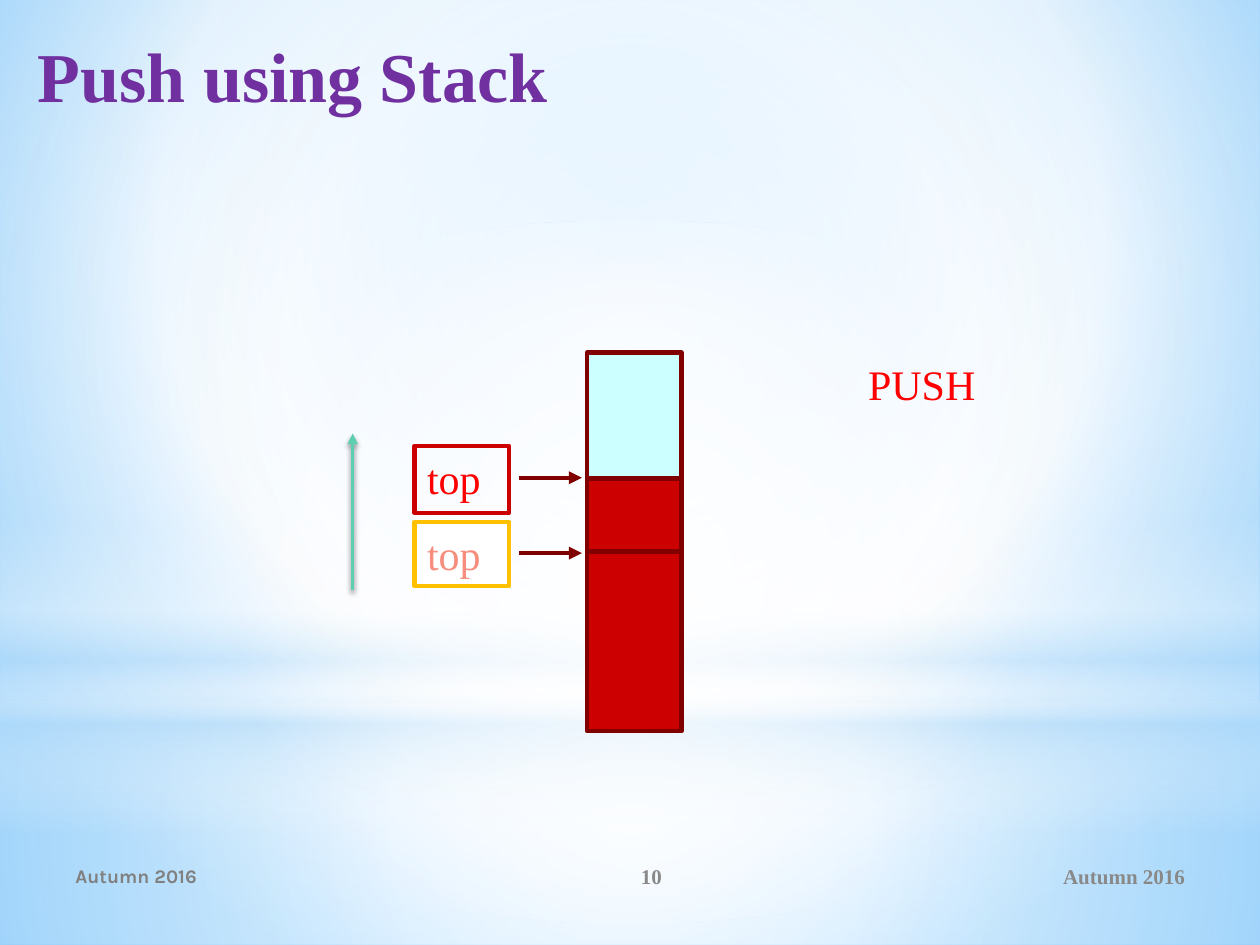
"""Build the slide that shows a push moving the top of a stack upwards."""
from lxml import etree
from pptx import Presentation
from pptx import util as u
from pptx.dml.color import RGBColor
from pptx.enum import shapes, text
from pptx.oxml import parse_xml
from pptx.oxml.ns import nsdecls, qn

rgb = RGBColor.from_string
RECT, OVAL = shapes.MSO_SHAPE.RECTANGLE, shapes.MSO_SHAPE.OVAL
LEFT, CENTER, RIGHT = text.PP_ALIGN.LEFT, text.PP_ALIGN.CENTER, text.PP_ALIGN.RIGHT
TOP, MIDDLE = text.MSO_ANCHOR.TOP, text.MSO_ANCHOR.MIDDLE
SERIF = "Times New Roman"


def set_gradient(element, stops, focus=None):
    """Fill with (position, colour, opacity) stops, round a focus or downwards."""
    old = element.find(".//" + qn("a:gradFill"))
    new = parse_xml(f'<a:gradFill {nsdecls("a")} rotWithShape="1"><a:gsLst/></a:gradFill>')
    for pos, colour, alpha in stops:
        gs = etree.SubElement(new[0], qn("a:gs"), pos=str(pos * 1000))
        clr = etree.SubElement(gs, qn("a:srgbClr"), val=colour)
        etree.SubElement(clr, qn("a:alpha"), val=str(alpha * 1000))
    if focus:
        path = etree.SubElement(new, qn("a:path"), path="circle")
        sides = {k: str(v * 1000) for k, v in zip("ltrb", focus)}
        etree.SubElement(path, qn("a:fillToRect"), sides)
    else:
        etree.SubElement(new, qn("a:lin"), ang="5400000", scaled="0")
    old.getparent().replace(old, new)


def write(sp, words, size, colour, font=SERIF, bold=False, align=LEFT, anchor=TOP, wrap=True):
    """Set one formatted paragraph in a shape."""
    tf = sp.text_frame
    tf.text = words
    tf.word_wrap = wrap
    tf.auto_size = text.MSO_AUTO_SIZE.NONE
    tf.vertical_anchor = anchor
    p = tf.paragraphs[0]
    p.alignment = align
    f = p.runs[0].font
    f.name, f.size, f.bold = font, u.Pt(size), bold
    f.color.rgb = rgb(colour)


prs = Presentation()
prs.slide_width, prs.slide_height = u.Cm(25.4), u.Cm(19.05)
layout = prs.slide_layouts[5]
s = prs.slides.add_slide(layout)

s.background.fill.gradient()
set_gradient(s.element, [(0, "9ED5FF", 100), (60, "FFFFFF", 100), (100, "5BB9FF", 100)],
             (20, 10, 20, 60))

middle = (50, 50, 50, 50)
backdrop = [
    (RECT, 14.17, 4.88, [(0, "FFFFFF", 91), (37, "FFFFFF", 76), (100, "B4DCFA", 79)], middle),
    (RECT, 0, 14.17, [(0, "FFFFFF", 89), (48, "FFFFFF", 62), (100, "B4DCFA", 79)], middle),
    (RECT, 10.46, 6.35, [(0, "FFFFFF", 0), (29, "FFFFFF", 30), (45, "B4DCFA", 40),
                         (55, "FFFFFF", 26), (65, "B4DCFA", 60), (100, "FFFFFF", 0)], None),
    (OVAL, 4.45, 14.17, [(0, "FFFFFF", 100), (56, "FFFFFF", 0)], middle),
]
for i, (kind, y, h, stops, focus) in enumerate(backdrop):
    sp = s.shapes.add_shape(kind, 0, u.Cm(y), prs.slide_width, u.Cm(h))
    sp.shadow.inherit = False
    sp.line.fill.background()
    sp.fill.gradient()
    set_gradient(sp.element, stops, focus)
    layout.shapes.element.insert(2 + i, sp.element)

title = s.shapes.title
title.left, title.top, title.width, title.height = u.Cm(0.51), u.Cm(0.53), u.Cm(24.21), u.Cm(3.18)
write(title, "Push using Stack", 40, "7030A0", bold=True)

for words, x, w, size, font, colour, align in [
    ("Autumn 2016", 17.15, 6.99, 12, SERIF, "898989", RIGHT),
    ("Autumn 2016", 1.27, 9.32, 11, "Karla", "808080", LEFT),
    ("10", 10.59, 5.08, 12, SERIF, "898989", CENTER),
]:
    sp = s.shapes.add_textbox(u.Cm(x), u.Cm(17.15), u.Cm(w), u.Cm(1.02))
    write(sp, words, size, colour, font, True, align, MIDDLE)

for y, h, colour in [(11.13, 3.61, "CC0000"), (7.11, 4.01, "CCFFFF"), (9.65, 1.47, "CC0000")]:
    sp = s.shapes.add_shape(RECT, u.Cm(11.84), u.Cm(y), u.Cm(1.9), u.Cm(h))
    sp.shadow.inherit = False
    sp.fill.solid()
    sp.fill.fore_color.rgb = rgb(colour)
    sp.line.color.rgb = rgb("800000")
    sp.line.width = u.Pt(2.5)

arrows = [(s, 7.11, 11.89, 7.11, 8.74, "5DCEAF", 2)]
for y, h, fill, border, colour, arrow_y in [
    (10.52, 1.3, "FFFFFF", "FFC000", "F78D7C", 11.15),
    (8.99, 1.35, None, "CC0000", "FF0000", 9.63),
]:
    pointer = s.shapes.add_group_shape()
    sp = pointer.shapes.add_shape(RECT, u.Cm(8.36), u.Cm(y), u.Cm(1.9), u.Cm(h))
    sp.shadow.inherit = False
    if fill:
        sp.fill.solid()
        sp.fill.fore_color.rgb = rgb(fill)
    else:
        sp.fill.background()
    sp.line.color.rgb = rgb(border)
    sp.line.width = u.Pt(2.5)
    write(sp, "top", 24, colour)
    arrows.append((pointer, 10.46, arrow_y, 11.73, arrow_y, "800000", 2.5))

sp = s.shapes.add_textbox(u.Cm(17.25), u.Cm(7.11), u.Cm(2.77), u.Cm(1.27))
write(sp, "PUSH", 24, "FF0000", wrap=False)

for parent, x1, y1, x2, y2, colour, width in arrows:
    cx = parent.shapes.add_connector(shapes.MSO_CONNECTOR.STRAIGHT,
                                     u.Cm(x1), u.Cm(y1), u.Cm(x2), u.Cm(y2))
    cx.line.color.rgb = rgb(colour)
    cx.line.width = u.Pt(width)
    spPr = cx.element.spPr
    etree.SubElement(spPr.find(qn("a:ln")), qn("a:tailEnd"), type="triangle")
    effects = etree.SubElement(spPr, qn("a:effectLst"))
    if parent is s:
        shadow = etree.SubElement(effects, qn("a:outerShdw"), blurRad="40000", dist="23000",
                                  dir="5400000", rotWithShape="0")
        black = etree.SubElement(shadow, qn("a:srgbClr"), val="000000")
        etree.SubElement(black, qn("a:alpha"), val="45000")

prs.save("out.pptx")
